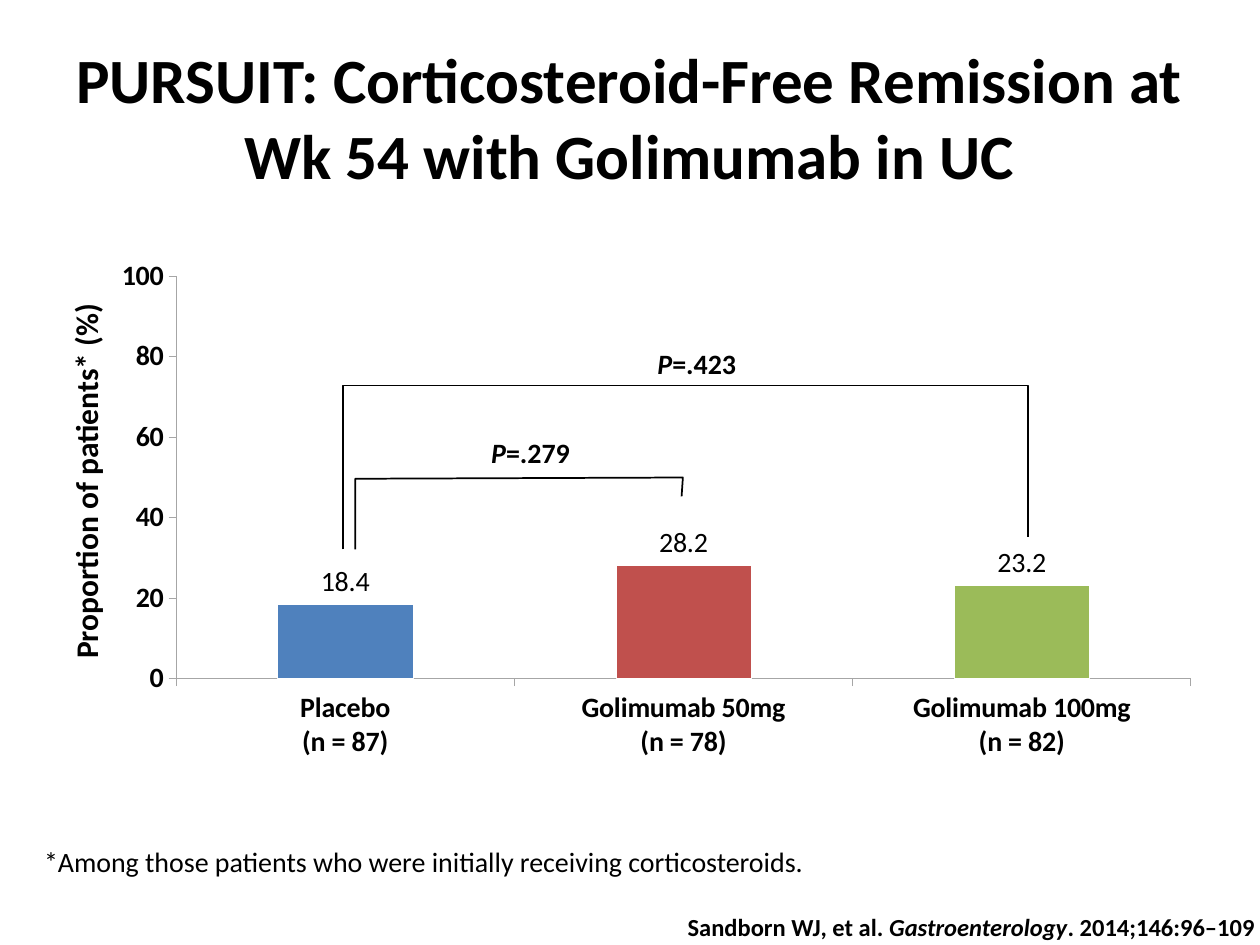
from lxml import etree
from pptx import Presentation
from pptx.chart.data import CategoryChartData
from pptx.dml.color import RGBColor
from pptx.enum.chart import XL_CHART_TYPE, XL_LABEL_POSITION, XL_TICK_MARK
from pptx.enum.text import MSO_ANCHOR, PP_ALIGN
from pptx.oxml import parse_xml
from pptx.util import Inches, Pt

COLUMN = XL_CHART_TYPE.COLUMN_CLUSTERED
OUTSIDE_END = XL_LABEL_POSITION.OUTSIDE_END
TICK_OUT, TICK_NONE = XL_TICK_MARK.OUTSIDE, XL_TICK_MARK.NONE
LEFT, CENTER, RIGHT = PP_ALIGN.LEFT, PP_ALIGN.CENTER, PP_ALIGN.RIGHT
TOP, MIDDLE, BOTTOM = MSO_ANCHOR.TOP, MSO_ANCHOR.MIDDLE, MSO_ANCHOR.BOTTOM
FONT = "Calibri"
CHART_NS = "http://schemas.openxmlformats.org/drawingml/2006/chart"

RESULTS = [
    ("Placebo\n(n = 87)", 18.4, "4F81BD"),
    ("Golimumab 50mg\n(n = 78)", 28.2, "C0504D"),
    ("Golimumab 100mg\n(n = 82)", 23.2, "9BBB59"),
]


def rgb(color):
    return RGBColor.from_string(color)


def box(*lengths):
    return [Inches(n) for n in lengths]


def style_font(font, size, bold=False, italic=False):
    font.name, font.size, font.bold, font.italic = FONT, Pt(size), bold, italic
    font.color.rgb = rgb("000000")


def write(tf, text, size=16, bold=False, align=LEFT, anchor=TOP, before=None):
    """Fill a text frame; parts between underscores become italic."""
    tf.vertical_anchor = anchor
    p = tf.paragraphs[0]
    p.alignment = align
    if before is not None:
        p.space_before = Pt(before)
    for i, part in enumerate(text.split("_")):
        if part:
            r = p.add_run()
            r.text = part
            style_font(r.font, size, bold, italic=i % 2 == 1)


def add_text(s, text, at, rotation=0, wrap=True, inset=True, **fmt):
    sp = s.shapes.add_textbox(*box(*at))
    sp.rotation = rotation
    tf = sp.text_frame
    tf.word_wrap = wrap
    if not inset:
        tf.margin_left = tf.margin_right = tf.margin_top = tf.margin_bottom = 0
    write(tf, text, **fmt)


def add_bracket(s, *points):
    start, *rest = [box(*point) for point in points]
    builder = s.shapes.build_freeform(*start)
    builder.add_line_segments(rest, close=False)
    sp = builder.convert_to_shape()
    sp.shadow.inherit = False
    sp.fill.background()
    sp.line.color.rgb = rgb("000000")
    sp.line.width = Pt(1)


def style_axis(axis):
    axis.has_major_gridlines = False
    axis.major_tick_mark, axis.minor_tick_mark = TICK_OUT, TICK_NONE
    axis.format.line.color.rgb = rgb("A6A6A6")
    axis.format.line.width = Pt(0.5)
    style_font(axis.tick_labels.font, 16, bold=True)


def set_plot_area(chart, x, y, w, h):
    """Fix the inner plot area, in fractions of the chart."""
    layout = parse_xml(f'<c:layout xmlns:c="{CHART_NS}"><c:manualLayout/></c:layout>')
    values = {"layoutTarget": "inner", "xMode": "edge", "yMode": "edge",
              "x": x, "y": y, "w": w, "h": h}
    for name, value in values.items():
        etree.SubElement(layout[0], f"{{{CHART_NS}}}{name}").set("val", str(value))
    plot_area = chart.plots[0]._element.getparent()
    for old in plot_area.findall(f"{{{CHART_NS}}}layout"):
        plot_area.remove(old)
    plot_area.insert(0, layout)


def add_remission_chart(s):
    names, values, colors = zip(*RESULTS)
    data = CategoryChartData(number_format="0.0")
    data.categories = names
    data.add_series("Series 1", values)
    chart = s.shapes.add_chart(COLUMN, *box(0.32, 1.82, 9.29, 4.35), data).chart
    chart.has_legend = chart.has_title = False
    style_font(chart.font, 18)
    set_plot_area(chart, 0.116, 0.086, 0.867, 0.734)

    style_axis(chart.category_axis)
    axis = chart.value_axis
    style_axis(axis)
    axis.minimum_scale, axis.maximum_scale, axis.major_unit = 0, 100, 20
    axis.tick_labels.number_format = "0"
    axis.tick_labels.number_format_is_linked = False

    plot = chart.plots[0]
    plot.gap_width = 150
    plot.vary_by_categories = False
    series = plot.series[0]
    for i, color in enumerate(colors):
        bar = series.points[i].format
        bar.fill.solid()
        bar.fill.fore_color.rgb = rgb(color)
        bar.line.color.rgb = rgb("FFFFFF")
        bar.line.width = Pt(0.25)
    labels = series.data_labels
    labels.show_value = True
    labels.position = OUTSIDE_END
    labels.number_format = "0.0"
    labels.number_format_is_linked = False
    style_font(labels.font, 16)


def main():
    prs = Presentation()
    prs.slide_width, prs.slide_height = box(10, 7.5)
    s = prs.slides.add_slide(prs.slide_layouts[5])

    title = s.shapes.title
    title.left, title.top, title.width, title.height = box(0.15, 0.3, 9.69, 1.25)
    write(title.text_frame, "PURSUIT: Corticosteroid-Free Remission at Wk 54 with Golimumab in UC",
          size=36, bold=True, align=CENTER, anchor=MIDDLE)

    add_remission_chart(s)
    add_text(s, "Proportion of patients* (%)", (-1.04, 3.62, 3.44, 0.4),
             rotation=270, size=18, bold=True, align=CENTER)
    add_text(s, "Sandborn WJ, et al. _Gastroenterology_. 2014;146:96–109",
             (0.73, 7.23, 9.23, 0.24), inset=False, size=14, bold=True,
             align=RIGHT, anchor=BOTTOM)
    add_text(s, "*Among those patients who were initially receiving corticosteroids.",
             (0.35, 6.65, 9.3, 0.37), inset=False, anchor=MIDDLE, before=3)

    add_text(s, "_P_=.279", (3.8, 3.41, 0.84, 0.37), wrap=False, bold=True)
    add_bracket(s, (2.82, 4.36), (2.82, 3.8), (5.42, 3.79), (5.41, 3.94))
    add_text(s, "_P_=.423", (5.12, 2.7, 0.84, 0.37), wrap=False, bold=True)
    add_bracket(s, (2.72, 4.36), (2.72, 3.06), (8.16, 3.06), (8.16, 4.26))

    prs.save("out.pptx")


if __name__ == "__main__":
    main()
